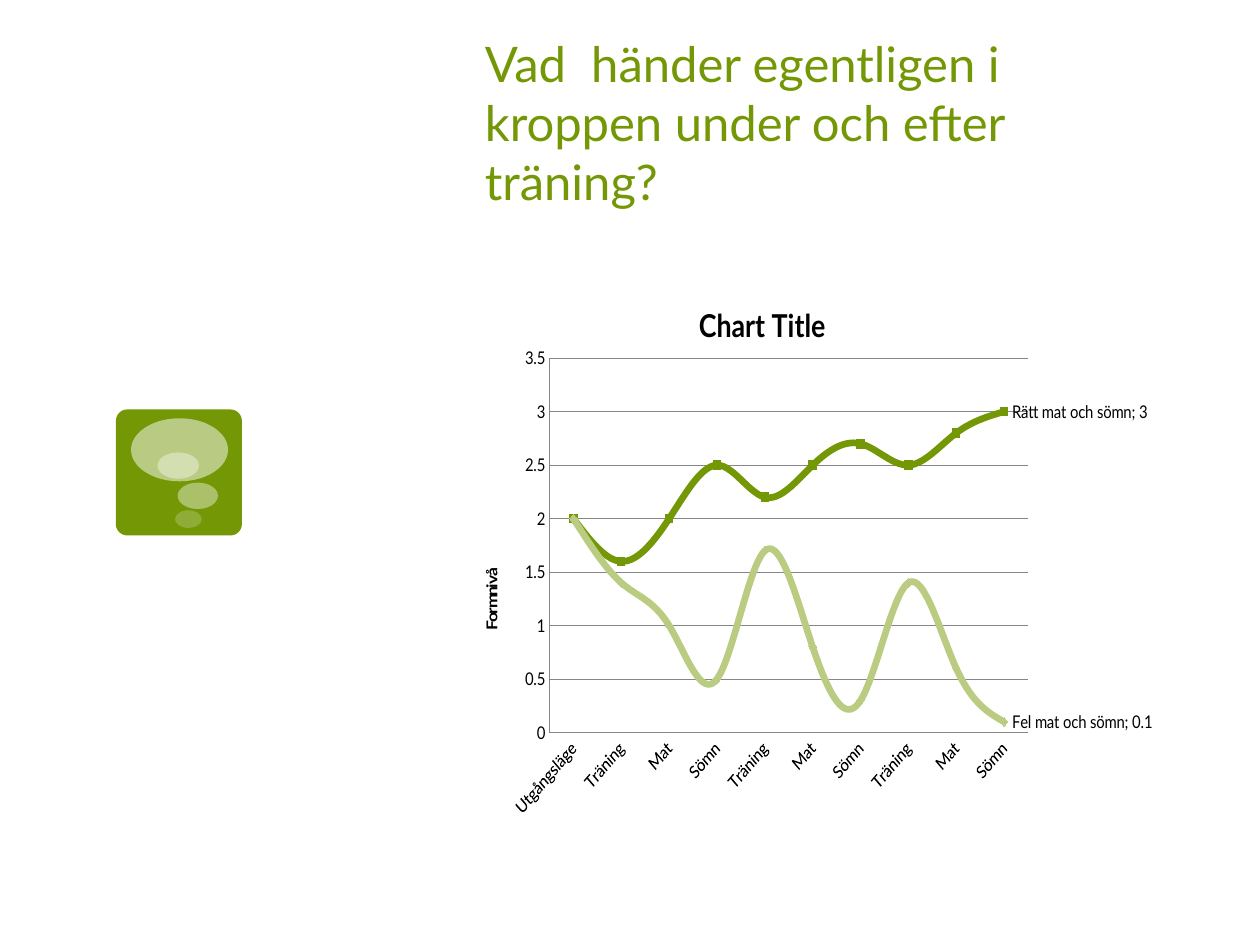
from lxml.etree import SubElement
from pptx import Presentation
from pptx.chart.data import CategoryChartData
from pptx.dml.color import RGBColor
from pptx.enum.chart import XL_CHART_TYPE, XL_LABEL_POSITION, XL_TICK_MARK
from pptx.enum.shapes import MSO_SHAPE
from pptx.enum.text import MSO_ANCHOR
from pptx.oxml.ns import qn
from pptx.util import Inches, Pt

HEADING = "Vad  händer egentligen i kroppen under och efter träning?"
CHART_TITLE = "Chart Title"
LEVEL_TITLE = "Formnivå"
STAGES = ["Utgångsläge"] + ["Träning", "Mat", "Sömn"] * 3
FORM_CURVES = [
    ("Rätt mat och sömn", "green", [2, 1.6, 2, 2.5, 2.2, 2.5, 2.7, 2.5, 2.8, 3]),
    ("Fel mat och sömn", "light_green", [2, 1.4, 1, 0.5, 1.7, 0.8, 0.3, 1.4, 0.6, 0.1]),
]
TILE = (0.92, 3.25, 1, 1)
BUBBLES = [
    ((1.04, 3.32, 0.77, 0.5), 50),
    ((1.41, 3.83, 0.32, 0.21), 40),
    ((1.39, 4.05, 0.21, 0.14), 20),
    ((1.25, 3.59, 0.33, 0.21), 38),
]
HEADING_BOX = (3.75, 0.75, 5.41, 0.97)
CHART_BOX = (3.75, 2.21, 5.41, 4.49)
PLOT_LAYOUT = {"layoutTarget": "inner", "xMode": "edge", "yMode": "edge",
               "x": 0.133, "y": 0.141, "w": 0.826, "h": 0.662}
LEVEL_TITLE_LAYOUT = {"xMode": "edge", "yMode": "edge", "x": 0.01, "y": 0.49}
THEME = {
    "font": "Lato",
    "green": RGBColor.from_string("749805"),
    "light_green": RGBColor.from_string("BACC82"),
    "white": RGBColor.from_string("FFFFFF"),
    "black": RGBColor.from_string("000000"),
    "grid": RGBColor.from_string("868686"),
    "heading_size": 28, "chart_title_size": 18, "chart_size": 10,
    "curve_width": 4.5, "grid_width": 0.75,
}


def style_font(font, size, color, bold=False):
    """Apply the theme typeface with a size, colour and weight."""
    font.name = THEME["font"]
    font.size = Pt(size)
    font.color.rgb = THEME[color]
    font.bold = bold


def style_line(line, color, width):
    """Give a line a theme colour and a width in points."""
    line.color.rgb = THEME[color]
    line.width = Pt(width)


def add_plain_shape(slide, preset, box, color, opacity=100):
    """Add a borderless filled shape with the given opacity."""
    shape = slide.shapes.add_shape(preset, *map(Inches, box))
    shape.shadow.inherit = False
    shape.fill.solid()
    shape.fill.fore_color.rgb = THEME[color]
    shape.line.fill.background()
    if opacity < 100:
        tint = shape.fill._xPr.find(".//" + qn("a:srgbClr"))
        SubElement(tint, qn("a:alpha"), val=str(opacity * 1000))
    return shape


def set_layout(part, position, values):
    """Place a chart part by fractions of the chart area."""
    for previous in part.findall(qn("c:layout")):
        part.remove(previous)
    layout = SubElement(part, qn("c:layout"))
    manual = SubElement(layout, qn("c:manualLayout"))
    for key, value in values.items():
        SubElement(manual, qn("c:" + key), val=str(value))
    part.insert(position, layout)


def add_title(owner, wording, size):
    """Title a chart or an axis and return the title."""
    owner.has_title = True
    title = getattr(owner, "chart_title", None) or owner.axis_title
    paragraph = title.text_frame.paragraphs[0]
    paragraph.text = wording
    style_font(paragraph.runs[0].font, size, "black", True)
    return title


def add_heading(slide):
    """Add the slide heading."""
    frame = slide.shapes.add_textbox(*map(Inches, HEADING_BOX)).text_frame
    frame.word_wrap = True
    frame.vertical_anchor = MSO_ANCHOR.BOTTOM
    frame.text = HEADING
    style_font(frame.paragraphs[0].runs[0].font, THEME["heading_size"], "green")


def style_curve(curve, color):
    """Smooth a form curve and label its last point."""
    curve.smooth = True
    curve.marker.style = None
    style_line(curve.format.line, color, THEME["curve_width"])
    curve.data_labels.show_value = False
    end_label = curve.points[len(STAGES) - 1].data_label
    end_label.position = XL_LABEL_POSITION.RIGHT
    style_font(end_label.font, THEME["chart_size"], "black")
    for flag in curve._element.iterfind(".//" + qn("c:dLbl") + "/" + qn("c:showSerName")):
        flag.set("val", "1")


def add_form_chart(slide):
    """Add the line chart of form level through the training stages."""
    levels = CategoryChartData()
    levels.categories = STAGES
    for name, _, values in FORM_CURVES:
        levels.add_series(name, values)
    chart = slide.shapes.add_chart(XL_CHART_TYPE.LINE, *map(Inches, CHART_BOX), levels).chart
    style_font(chart.font, THEME["chart_size"], "black")
    chart.has_legend = False
    chart.plots[0].vary_by_categories = False
    add_title(chart, CHART_TITLE, THEME["chart_title_size"])
    set_layout(chart._chartSpace.find(".//" + qn("c:plotArea")), 0, PLOT_LAYOUT)

    for axis in (chart.category_axis, chart.value_axis):
        axis.major_tick_mark = axis.minor_tick_mark = XL_TICK_MARK.NONE
        style_line(axis.format.line, "grid", THEME["grid_width"])
    stage_text = chart.category_axis.tick_labels
    style_font(stage_text.font, THEME["chart_size"], "black")
    chart.category_axis._element.find(".//" + qn("a:bodyPr")).set("rot", "-2700000")

    level_axis = chart.value_axis
    level_axis.minimum_scale, level_axis.maximum_scale, level_axis.major_unit = 0, 3.5, 0.5
    style_line(level_axis.major_gridlines.format.line, "grid", THEME["grid_width"])
    level_title = add_title(level_axis, LEVEL_TITLE, THEME["chart_size"])
    level_title._element.find(".//" + qn("a:bodyPr")).set("rot", "-5400000")
    set_layout(level_title._element, 1, LEVEL_TITLE_LAYOUT)

    for curve, (_, color, _) in zip(chart.plots[0].series, FORM_CURVES):
        style_curve(curve, color)


def main():
    """Build and save the slide."""
    deck = Presentation()
    deck.slide_width, deck.slide_height = Inches(10), Inches(7.5)
    slide = deck.slides.add_slide(deck.slide_layouts[6])
    tile = add_plain_shape(slide, MSO_SHAPE.ROUNDED_RECTANGLE, TILE, "green")
    tile.adjustments[0] = 0.09
    for box, opacity in BUBBLES:
        add_plain_shape(slide, MSO_SHAPE.OVAL, box, "white", opacity)
    add_heading(slide)
    add_form_chart(slide)
    deck.save("out.pptx")


if __name__ == "__main__":
    main()
